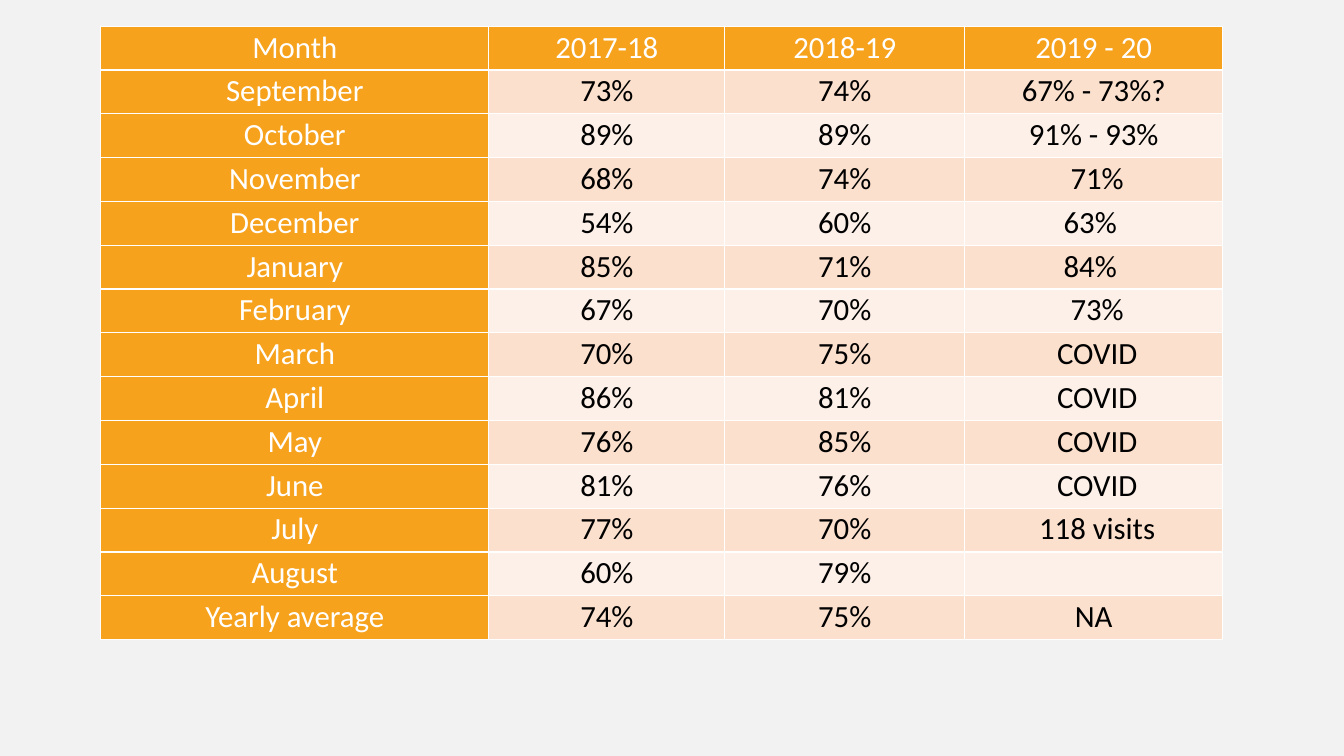
from lxml import etree
from pptx import Presentation
from pptx.dml.color import RGBColor
from pptx.enum.text import MSO_ANCHOR, PP_ALIGN
from pptx.oxml.ns import qn
from pptx.util import Pt

CENTER = PP_ALIGN.CENTER
TOP = MSO_ANCHOR.TOP
BLANK_LAYOUT = 6

COLORS = {
    "background": "F2F2F2",
    "orange": "F6A21D",
    "dark_band": "FBE0CD",
    "light_band": "FDF0E8",
    "white": "FFFFFF",
    "black": "000000",
}

COLUMN_WIDTHS = [277.2, 168.5, 171.4, 184.3]
ROW_HEIGHT = 31.32
MONTH_ROWS = [
    ["Month", "2017-18", "2018-19", "2019 - 20"],
    ["September", "73%", "74%", "67% - 73%?"],
    ["October", "89%", "89%", "91% - 93%"],
    ["November", "68%", "74%", " 71%"],
    ["December", "54%", "60%", "63% "],
    ["January", "85%", "71%", "84% "],
    ["February", "67%", "70%", " 73%"],
    ["March", "70%", "75%", " COVID"],
    ["April", "86%", "81%", " COVID"],
    ["May", "76%", "85%", " COVID"],
    ["June", "81%", "76%", " COVID"],
    ["July", "77%", "70%", " 118 visits"],
    ["August", "60%", "79%", ""],
    ["Yearly average", "74%", "75%", "NA"],
]


def rgb(name):
    return RGBColor.from_string(COLORS[name])


def write_text(frame, text, font="Calibri", size=22, color="black",
               align=CENTER, line_spacing=1.07):
    para = frame.paragraphs[0]
    para.alignment = align
    para.line_spacing = line_spacing
    para.font.size = Pt(size)
    if text:
        span = para.add_run()
        span.text = text
        span.font.name = font
        span.font.size = Pt(size)
        span.font.bold = False
        span.font.color.rgb = rgb(color)


class SlideBuilder:
    """Holds the table style and the current slide."""

    def __init__(self, page, border_color="white", border_width=1, inset=8.64):
        self.page = page
        self.border_color = border_color
        self.border_width = Pt(border_width)
        self.inset = Pt(inset)

    def background(self, color):
        fill = self.page.background.fill
        fill.solid()
        fill.fore_color.rgb = rgb(color)

    def borders(self, cell):
        properties = cell._tc.get_or_add_tcPr()
        # Border lines come before the fill in the cell properties
        for position, tag in enumerate(["a:lnL", "a:lnR", "a:lnT", "a:lnB"]):
            line = etree.Element(qn(tag), w=str(self.border_width))
            solid = etree.SubElement(line, qn("a:solidFill"))
            etree.SubElement(solid, qn("a:srgbClr"), val=COLORS[self.border_color])
            properties.insert(position, line)

    def cell(self, cell, text, fill, color):
        cell.margin_left = cell.margin_right = self.inset
        cell.margin_top = cell.margin_bottom = 0
        cell.vertical_anchor = TOP
        cell.fill.solid()
        cell.fill.fore_color.rgb = rgb(fill)
        self.borders(cell)
        write_text(cell.text_frame, text, color=color)

    def table(self, rows, left, top, column_widths, row_height):
        frame = self.page.shapes.add_table(
            len(rows), len(column_widths), Pt(left), Pt(top),
            Pt(sum(column_widths)), Pt(row_height * len(rows)))
        table = frame.table
        table.first_col = True
        for column, width in zip(table.columns, column_widths):
            column.width = Pt(width)
        for row_index, values in enumerate(rows):
            table.rows[row_index].height = Pt(row_height)
            band = "dark_band" if row_index % 2 else "light_band"
            for column_index, text in enumerate(values):
                heading = row_index == 0 or column_index == 0
                self.cell(table.cell(row_index, column_index), text,
                          fill="orange" if heading else band,
                          color="white" if heading else "black")


def main():
    deck = Presentation()
    deck.slide_width, deck.slide_height = Pt(960), Pt(540)
    page = deck.slides.add_slide(deck.slide_layouts[BLANK_LAYOUT])
    builder = SlideBuilder(page)

    # Plain grey page
    builder.background("background")

    # Table of months and years
    builder.table(MONTH_ROWS, 72, 18.72, COLUMN_WIDTHS, ROW_HEIGHT)

    deck.save("out.pptx")


if __name__ == "__main__":
    main()
